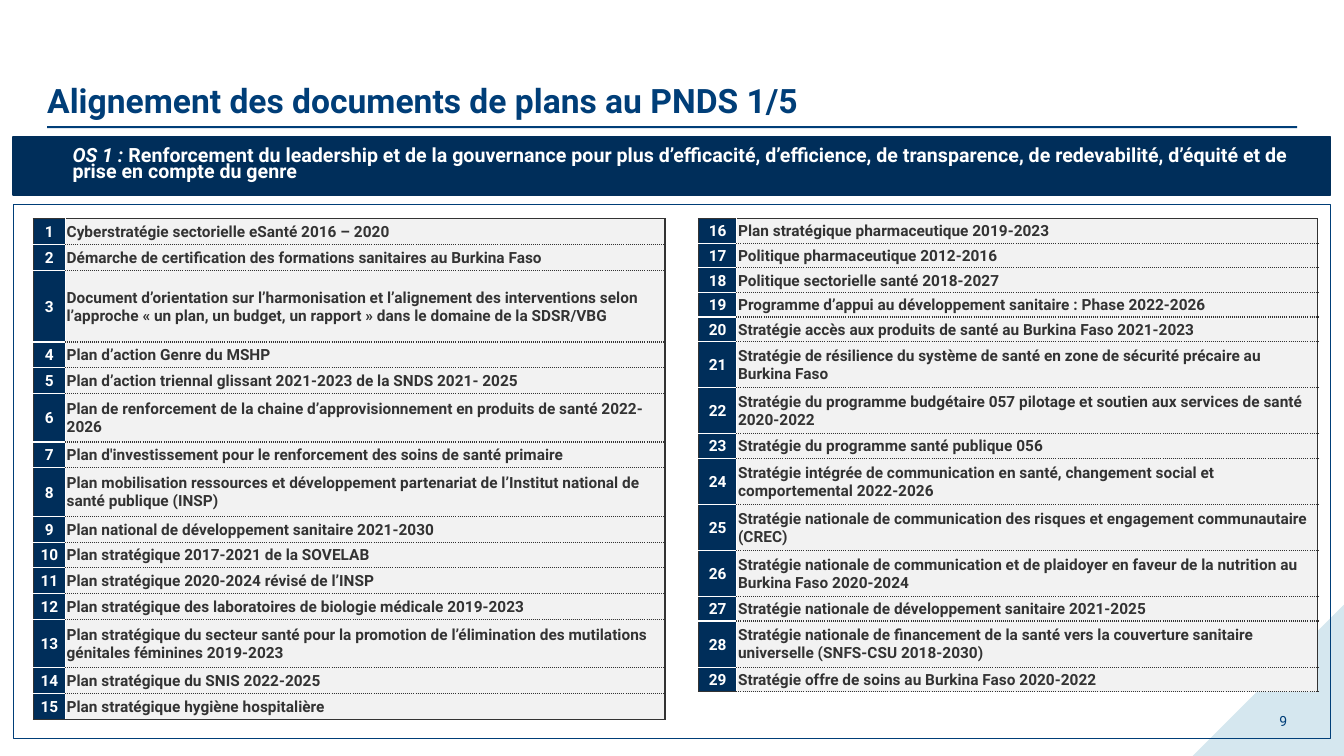
from lxml.etree import SubElement
from pptx import Presentation
from pptx.dml.color import RGBColor
from pptx.enum.shapes import MSO_SHAPE as Preset
from pptx.enum.text import MSO_ANCHOR as Anchor, PP_ALIGN as Align
from pptx.oxml.ns import qn
from pptx.util import Cm, Pt

FONT = "Roboto"
BLUE, NAVY, PALE_BLUE = "003E78", "002E5A", "D5E7EF"
WHITE, LIGHT_GREY, DARK_GREY = "FFFFFF", "F2F2F2", "333333"

LEFT_ROW_HEIGHTS = {"single": 0.65, "double": 1.22, "tall": 1.81}
LEFT_PLANS = [
    ("single", "Cyberstratégie sectorielle eSanté 2016 – 2020"),
    ("single", "Démarche de certification des formations sanitaires au Burkina Faso"),
    ("tall", "Document d’orientation sur l’harmonisation et l’alignement des interventions selon l’approche "
             "« un plan, un budget, un rapport » dans le domaine de la SDSR/VBG"),
    ("single", "Plan d’action Genre du MSHP"),
    ("single", "Plan d’action triennal glissant 2021-2023 de la SNDS 2021- 2025"),
    ("double", "Plan de renforcement de la chaine d’approvisionnement en produits de santé 2022-2026"),
    ("single", "Plan d'investissement pour le renforcement des soins de santé primaire"),
    ("double", "Plan mobilisation ressources et développement partenariat de l’Institut national de "
               "santé publique (INSP)"),
    ("single", "Plan national de développement sanitaire 2021-2030"),
    ("single", "Plan stratégique 2017-2021 de la SOVELAB"),
    ("single", "Plan stratégique 2020-2024 révisé de l’INSP"),
    ("single", "Plan stratégique des laboratoires de biologie médicale 2019-2023"),
    ("double", "Plan stratégique du secteur santé pour la promotion de l’élimination des mutilations "
               "génitales féminines 2019-2023"),
    ("single", "Plan stratégique du SNIS 2022-2025"),
    ("single", "Plan stratégique hygiène hospitalière"),
]

RIGHT_ROW_HEIGHTS = {"single": 0.62, "double": 1.16}
RIGHT_PLANS = [
    ("single", "Plan stratégique pharmaceutique 2019-2023"),
    ("single", "Politique pharmaceutique 2012-2016"),
    ("single", "Politique sectorielle santé 2018-2027"),
    ("single", "Programme d’appui au développement sanitaire : Phase 2022-2026"),
    ("single", "Stratégie accès aux produits de santé au Burkina Faso 2021-2023"),
    ("double", "Stratégie de résilience du système de santé en zone de sécurité précaire au Burkina Faso"),
    ("double", "Stratégie du programme budgétaire 057 pilotage et soutien aux services de santé 2020-2022"),
    ("single", "Stratégie du programme santé publique 056"),
    ("double", "Stratégie intégrée de communication en santé, changement social et comportemental 2022-2026"),
    ("double", "Stratégie nationale de communication des risques et engagement communautaire (CREC)"),
    ("double", "Stratégie nationale de communication et de plaidoyer en faveur de la nutrition au "
               "Burkina Faso 2020-2024"),
    ("single", "Stratégie nationale de développement sanitaire 2021-2025"),
    ("double", "Stratégie nationale de financement de la santé vers la couverture sanitaire universelle "
               "(SNFS-CSU 2018-2030)"),
    ("single", "Stratégie offre de soins au Burkina Faso 2020-2022"),
]


def color(value):
    return RGBColor.from_string(value)


def format_paragraph(paragraph, size, text_color, bold=False, align=Align.LEFT):
    paragraph.alignment = align
    font = paragraph.font
    font.name, font.size, font.bold = FONT, Pt(size), bold
    font.color.rgb = color(text_color)


def set_margins(box, left, top, right, bottom):
    box.margin_left, box.margin_top = Cm(left), Cm(top)
    box.margin_right, box.margin_bottom = Cm(right), Cm(bottom)


def add_block(slide, preset, place, fill=None, line=None, line_width=1):
    shape = slide.shapes.add_shape(preset, *map(Cm, place))
    shape.shadow.inherit = False
    if fill:
        shape.fill.solid()
        shape.fill.fore_color.rgb = color(fill)
    else:
        shape.fill.background()
    if line:
        shape.line.color.rgb = color(line)
        shape.line.width = Pt(line_width)
    else:
        shape.line.fill.background()
    return shape


def format_title(slide, text):
    title = slide.shapes.title
    title.left, title.top, title.width, title.height = map(Cm, (1.19, 0.48, 31.5, 2.54))
    frame = title.text_frame
    frame.text = text
    frame.vertical_anchor = Anchor.BOTTOM
    set_margins(frame, 0, 0, 0, 0)
    format_paragraph(frame.paragraphs[0], 24, BLUE, bold=True)


def add_banner(slide, label, objective):
    banner = add_block(slide, Preset.RECTANGLE, (0.33, 3.45, 33.2, 1.47), NAVY, NAVY)
    frame = banner.text_frame
    frame.word_wrap = True
    frame.vertical_anchor = Anchor.MIDDLE
    set_margins(frame, 1.5, 0, 0, 0)
    paragraph = frame.paragraphs[0]
    paragraph.line_spacing = Pt(12)
    format_paragraph(paragraph, 14, WHITE, bold=True)
    label_run = paragraph.add_run()
    label_run.text = label
    label_run.font.italic = True
    paragraph.add_run().text = objective


def add_page_number(slide, number):
    frame = slide.shapes.add_textbox(Cm(25.07), Cm(17.65), Cm(7.62), Cm(1.02)).text_frame
    frame.word_wrap = True
    frame.vertical_anchor = Anchor.MIDDLE
    frame.text = str(number)
    format_paragraph(frame.paragraphs[0], 10, BLUE, align=Align.RIGHT)


def set_borders(cell, left, right, top, bottom):
    properties = cell._tc.get_or_add_tcPr()
    for side, (line_color, dash) in zip("LRTB", (left, right, top, bottom)):
        line = SubElement(properties, qn(f"a:ln{side}"), w=str(Pt(1)))
        fill = SubElement(line, qn("a:solidFill"))
        SubElement(fill, qn("a:srgbClr"), val=line_color)
        SubElement(line, qn("a:prstDash"), val=dash)


def fill_cell(cell, text, fill, text_color, align):
    cell.fill.solid()
    cell.fill.fore_color.rgb = color(fill)
    cell.vertical_anchor = Anchor.MIDDLE
    set_margins(cell, 0.03, 0.03, 0.03, 0)
    cell.text = text
    format_paragraph(cell.text_frame.paragraphs[0], 11, text_color, bold=True, align=align)


def add_plan_table(slide, left, widths, plans, row_heights, first_number, closing_dash):
    heights = [row_heights[kind] for kind, _ in plans]
    table = slide.shapes.add_table(len(plans), 2, Cm(left), Cm(5.51),
                                   Cm(sum(widths)), Cm(sum(heights))).table
    table.first_row = table.horz_banding = False
    for column, width in zip(table.columns, widths):
        column.width = Cm(width)
    white, solid, dotted = (WHITE, "solid"), (DARK_GREY, "solid"), (DARK_GREY, "sysDot")
    last = len(plans) - 1
    for index, (_, plan) in enumerate(plans):
        table.rows[index].height = Cm(heights[index])
        number_cell, plan_cell = table.cell(index, 0), table.cell(index, 1)
        set_borders(number_cell, solid, white,
                    solid if index == 0 else white,
                    solid if index == last else white)
        set_borders(plan_cell, white, solid,
                    solid if index == 0 else dotted,
                    (DARK_GREY, closing_dash) if index == last else dotted)
        fill_cell(number_cell, str(first_number + index), NAVY, WHITE, Align.CENTER)
        fill_cell(plan_cell, plan, LIGHT_GREY, DARK_GREY, Align.LEFT)


def main():
    presentation = Presentation()
    presentation.slide_width, presentation.slide_height = Cm(33.87), Cm(19.05)
    slide = presentation.slides.add_slide(presentation.slide_layouts[5])
    format_title(slide, "Alignement des documents de plans au PNDS 1/5")
    corner = add_block(slide, Preset.RIGHT_TRIANGLE, (30.06, 15.24, 3.81, 3.81), PALE_BLUE)
    corner._element.spPr.get_or_add_xfrm().set("flipH", "1")
    add_block(slide, Preset.RECTANGLE, (1.19, 3.18, 31.5, 0.05), BLUE)
    add_block(slide, Preset.RECTANGLE, (0.33, 5.16, 33.2, 13.44), line=BLUE, line_width=0.75)
    add_banner(slide, "OS 1 : ",
               "Renforcement du leadership et de la gouvernance pour plus d’efficacité, d’efficience, "
               "de transparence, de redevabilité, d’équité et de prise en compte du genre")
    add_page_number(slide, 9)
    add_plan_table(slide, 0.84, (0.81, 15.11), LEFT_PLANS, LEFT_ROW_HEIGHTS, 1, "solid")
    add_plan_table(slide, 17.6, (0.97, 14.63), RIGHT_PLANS, RIGHT_ROW_HEIGHTS,
                   len(LEFT_PLANS) + 1, "sysDot")
    presentation.save("out.pptx")


if __name__ == "__main__":
    main()
